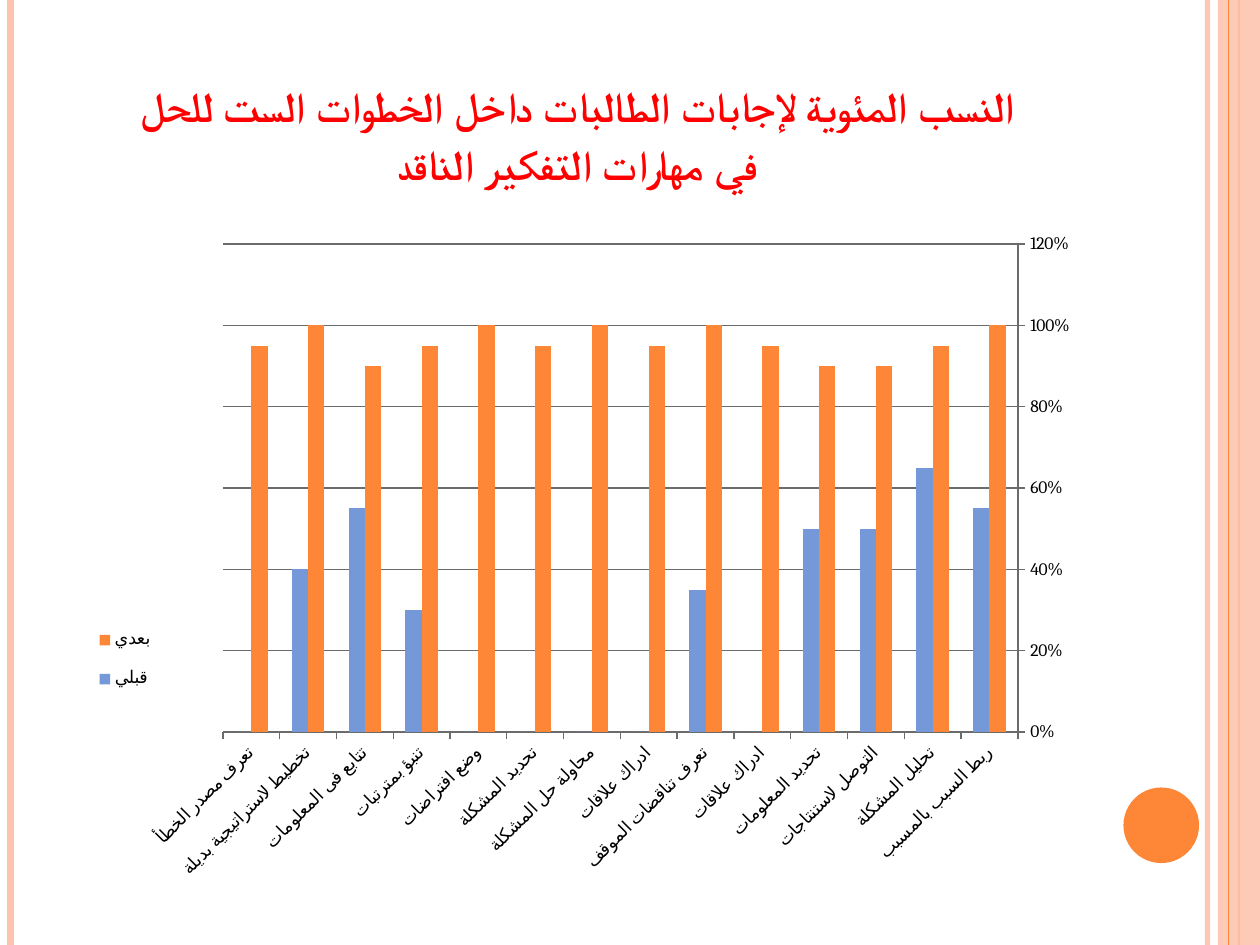
import pptx
import pptx.chart.data
import pptx.dml.color
import pptx.enum.chart
import pptx.enum.shapes
import pptx.enum.text
import pptx.oxml
import pptx.oxml.ns
import pptx.util

Pt = pptx.util.Pt
qn = pptx.oxml.ns.qn
enum = pptx.enum
HUES = {"orange": "FE8637", "peach": "FEC3AE", "blue": "7598D9",
        "red": "FF0000", "black": "000000", "gray": "6B6B6B"}
TITLE = "النسب المئوية لإجابات الطالبات داخل الخطوات الست للحل\vفي مهارات التفكير الناقد"
RULES = [(690, "peach", 3, 93), (6, "peach", 4.5, 100), (708, "orange", 1.5, 100)]
WIDE, HIGH = 588, 384
STEPS = ["ربط السبب بالمسبب", "تحليل المشكلة", "التوصل لاستنتاجات",
         "تحديد المعلومات", "ادراك علاقات", "تعرف تناقضات الموقف",
         "ادراك علاقات", "محاولة حل المشكلة", "تحديد المشكلة",
         "وضع افتراضات", "تنبؤ بمترتبات", "تتابع فى المعلومات",
         "تخطيط لاستراتيجية بديلة", "تعرف مصدر الخطأ"]
TESTS = [("بعدي", "orange", [1, 0.95, 0.9, 0.9, 0.95, 1, 0.95, 1, 0.95, 1, 0.95, 0.9, 1, 0.95]),
         ("قبلي", "blue", [0.55, 0.65, 0.5, 0.5, 0, 0.35, 0, 0, 0, 0, 0.3, 0.55, 0.4, 0])]


def style(item, form):
    for key, val in form.items():
        setattr(item, key, val)


def hue(name):
    return pptx.dml.color.RGBColor.from_string(HUES[name])


def paint(fill, name):
    fill.solid()
    fill.fore_color.rgb = hue(name)


def add(item, tag, **form):
    item.append(item.makeelement(qn(tag), form))


def fade(shape, share):
    if share < 100:
        for tint in shape._element.spPr.iter(qn("a:srgbClr")):
            add(tint, "a:alpha", val=str(share * 1000))


def rule(slide, x, name, width, share=100):
    line = slide.shapes.add_connector(
        enum.shapes.MSO_CONNECTOR.STRAIGHT, Pt(x), Pt(0), Pt(x), Pt(540))
    line.line.width = Pt(width)
    paint(line.line.fill, name)
    fade(line, share)
    add(line._element.spPr, "a:effectLst")


def block(slide, kind, box, name, share=100):
    shape = slide.shapes.add_shape(kind, *map(Pt, box))
    shape.shadow.inherit = False
    paint(shape.fill, name)
    shape.line.fill.background()
    fade(shape, share)


def title(slide):
    frame = slide.shapes.add_textbox(Pt(36), Pt(21.6), Pt(WIDE), Pt(90)).text_frame
    style(frame, {"word_wrap": True,
                  "vertical_anchor": enum.text.MSO_ANCHOR.BOTTOM})
    para = frame.paragraphs[0]
    para.text = TITLE
    style(para, {"alignment": enum.text.PP_ALIGN.CENTER, "line_spacing": 1.15})
    para._p.get_or_add_pPr().set("rtl", "1")
    for run in para.runs:
        style(run.font, {"name": "Times New Roman", "size": Pt(24), "bold": True})
        run.font.color.rgb = hue("red")
        run.font._element.set("cap", "small")
        add(run.font._element, "a:cs", typeface="Times New Roman")


def place(item, box, inner=False):
    old = item.find(qn("c:layout"))
    if old is not None:
        item.remove(old)
    target = '<c:layoutTarget val="inner"/>' if inner else ""
    modes = "".join(f'<c:{k}Mode val="edge"/>' for k in "xy")
    sizes = "".join(f'<c:{k} val="{v / full}"/>'
                    for k, v, full in zip("xywh", box, (WIDE, HIGH) * 2))
    layout = pptx.oxml.parse_xml(
        '<c:layout xmlns:c="http://schemas.openxmlformats.org/drawingml/2006/chart">'
        f"<c:manualLayout>{target}{modes}{sizes}</c:manualLayout></c:layout>")
    item.insert(0 if inner else 1, layout)


def graph(slide):
    data = pptx.chart.data.CategoryChartData(number_format="0%")
    data.categories = STEPS
    for name, _, vals in TESTS:
        data.add_series(name, vals)
    chart = slide.shapes.add_chart(
        enum.chart.XL_CHART_TYPE.COLUMN_CLUSTERED,
        Pt(36), Pt(126), Pt(WIDE), Pt(HIGH), data).chart
    style(chart, {"has_title": False, "has_legend": True})
    style(chart.font, {"name": "Cambria", "size": Pt(10)})
    chart.font.color.rgb = hue("black")
    style(chart.legend, {"position": enum.chart.XL_LEGEND_POSITION.LEFT,
                         "include_in_layout": False})
    plot = chart.plots[0]
    style(plot, {"gap_width": 150, "overlap": 0, "vary_by_categories": False})
    for series, (_, name, _) in zip(plot.series, TESTS):
        paint(series.format.fill, name)
    cats, vals = chart.category_axis, chart.value_axis
    out = enum.chart.XL_TICK_MARK.OUTSIDE
    style(cats, {"reverse_order": True, "major_tick_mark": out})
    style(vals, {"minimum_scale": 0, "maximum_scale": 1.2, "major_unit": 0.2,
                 "major_tick_mark": out, "has_major_gridlines": True})
    style(vals.tick_labels, {"number_format": "0%", "number_format_is_linked": False})
    for part in (cats, vals, vals.major_gridlines):
        paint(part.format.line.fill, "gray")
        part.format.line.width = Pt(0.75)
    cats.tick_labels.font.size = Pt(10)
    cats._element.find(qn("c:txPr")).find(qn("a:bodyPr")).set("rot", "-2700000")
    place(chart._chartSpace.chart.plotArea, (91.4, 13.4, 454.3, 278.9), True)
    place(chart.legend._element, (17.5, 222.5, 36, 57))


def main():
    deck = pptx.Presentation()
    style(deck, {"slide_width": Pt(720), "slide_height": Pt(540)})
    slide = deck.slides.add_slide(deck.slide_layouts[6])
    kinds = enum.shapes.MSO_SHAPE
    for form in RULES:
        rule(slide, *form)
    block(slide, kinds.RECTANGLE, (696, 0, 24, 540), "peach", 87)
    rule(slide, 702, "orange", 0.75)
    block(slide, kinds.OVAL, (642, 450, 43.2, 43.2), "orange")
    title(slide)
    graph(slide)
    deck.save("out.pptx")


if __name__ == "__main__":
    main()
